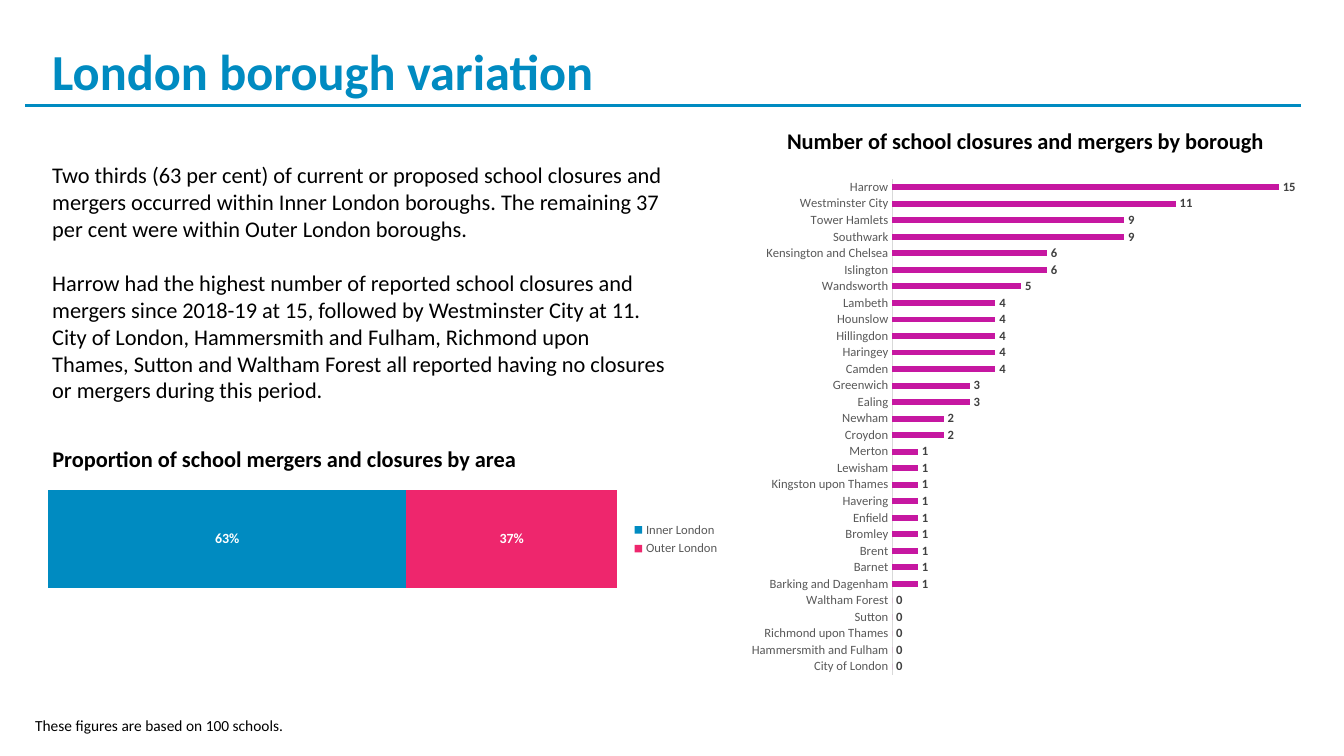
from lxml import etree
from pptx import Presentation
from pptx.chart.data import CategoryChartData
from pptx.dml.color import RGBColor
from pptx.enum.chart import (XL_CHART_TYPE, XL_LABEL_POSITION,
                             XL_LEGEND_POSITION, XL_TICK_MARK)
from pptx.enum.shapes import MSO_CONNECTOR
from pptx.enum.text import MSO_ANCHOR
from pptx.oxml.ns import qn
from pptx.util import Pt

CLUSTERED = XL_CHART_TYPE.BAR_CLUSTERED
STACKED = XL_CHART_TYPE.BAR_STACKED_100
OUTSIDE_END = XL_LABEL_POSITION.OUTSIDE_END
CENTER = XL_LABEL_POSITION.CENTER
LEGEND_RIGHT = XL_LEGEND_POSITION.RIGHT
NO_TICKS = XL_TICK_MARK.NONE
STRAIGHT = MSO_CONNECTOR.STRAIGHT
TOP, MIDDLE = MSO_ANCHOR.TOP, MSO_ANCHOR.MIDDLE

FONT = "Calibri"
BLUE, PINK, MAGENTA = "008BC1", "EE266D", "C617A1"
BLACK, WHITE, GREY, DARK_GREY, PALE_GREY = (
    "000000", "FFFFFF", "595959", "404040", "D9D9D9")
LEFT_MARGIN = 30.24

FINDINGS = [
    "Two thirds (63 per cent) of current or proposed school closures and "
    "mergers occurred within Inner London boroughs. The remaining 37 per cent "
    "were within Outer London boroughs.",
    "Harrow had the highest number of reported school closures and mergers "
    "since 2018-19 at 15, followed by Westminster City at 11. City of London, "
    "Hammersmith and Fulham, Richmond upon Thames, Sutton and Waltham Forest "
    "all reported having no closures or mergers during this period.",
]

# Boroughs grouped by number of closures and mergers, bottom bar first
BOROUGHS_BY_COUNT = {
    0: ["City of London", "Hammersmith and Fulham", "Richmond upon Thames",
        "Sutton", "Waltham Forest"],
    1: ["Barking and Dagenham", "Barnet", "Brent", "Bromley", "Enfield",
        "Havering", "Kingston upon Thames", "Lewisham", "Merton"],
    2: ["Croydon", "Newham"],
    3: ["Ealing", "Greenwich"],
    4: ["Camden", "Haringey", "Hillingdon", "Hounslow", "Lambeth"],
    5: ["Wandsworth"],
    6: ["Islington", "Kensington and Chelsea"],
    9: ["Southwark", "Tower Hamlets"],
    11: ["Westminster City"],
    15: ["Harrow"],
}


def rgb(value):
    return RGBColor.from_string(value)


def set_font(font, size, color=BLACK, bold=False):
    for name, value in {"name": FONT, "size": Pt(size), "bold": bold}.items():
        setattr(font, name, value)
    font.color.rgb = rgb(color)


def add_text(slide, box, paragraphs, size, color=BLACK, bold=False,
             anchor=TOP, gap=0, line_spacing=None):
    frame = slide.shapes.add_textbox(*map(Pt, box)).text_frame
    frame.word_wrap = True
    frame.vertical_anchor = anchor
    for index, text in enumerate(paragraphs):
        paragraph = frame.paragraphs[0] if index == 0 else frame.add_paragraph()
        if index:
            paragraph.space_before = Pt(gap)
        if line_spacing:
            paragraph.line_spacing = line_spacing
        run = paragraph.add_run()
        run.text = text
        set_font(run.font, size, color, bold)


def add_rule(slide, left, right, y):
    rule = slide.shapes.add_connector(STRAIGHT, Pt(left), Pt(y), Pt(right), Pt(y))
    rule.line.color.rgb = rgb(BLUE)
    rule.line.width = Pt(2.25)
    etree.SubElement(rule._element.spPr, qn("a:effectLst"))


def set_plot_area(chart, x, y, w, h):
    """Fix the inner plot area as fractions of the chart."""
    plot_area = chart._chartSpace.chart.plotArea
    for old in plot_area.findall(qn("c:layout")):
        plot_area.remove(old)
    layout = etree.Element(qn("c:layout"))
    manual = etree.SubElement(layout, qn("c:manualLayout"))
    settings = {"layoutTarget": "inner", "xMode": "edge", "yMode": "edge",
                "x": x, "y": y, "w": w, "h": h}
    for tag, value in settings.items():
        etree.SubElement(manual, qn("c:" + tag)).set("val", str(value))
    plot_area.insert(0, layout)


def add_bar_chart(slide, kind, box, categories, series, plot_box, gap, maximum,
                  label_format, label_position, label_size, label_color):
    """Draw a bar chart; series maps each name to (values, colour)."""
    data = CategoryChartData(number_format=label_format)
    data.categories = categories
    for name, (values, _) in series.items():
        data.add_series(name, values)
    chart = slide.shapes.add_chart(kind, *map(Pt, box), data).chart
    set_font(chart.font, 10)
    chart.has_title = False
    chart.has_legend = False
    set_plot_area(chart, *plot_box)

    axis = chart.value_axis
    axis_format = {"minimum_scale": 0, "maximum_scale": maximum,
                   "has_major_gridlines": False, "visible": False}
    for name, value in axis_format.items():
        setattr(axis, name, value)

    plot = chart.plots[0]
    plot.gap_width = gap
    plot.vary_by_categories = False
    for bars, (_, color) in zip(plot.series, series.values()):
        bars.format.fill.solid()
        bars.format.fill.fore_color.rgb = rgb(color)
        labels = bars.data_labels
        label_settings = {"show_value": True, "position": label_position,
                          "number_format": label_format,
                          "number_format_is_linked": False}
        for name, value in label_settings.items():
            setattr(labels, name, value)
        set_font(labels.font, label_size, label_color, True)
    return chart


def add_borough_chart(slide):
    boroughs = [name for names in BOROUGHS_BY_COUNT.values() for name in names]
    counts = [n for n, names in BOROUGHS_BY_COUNT.items() for _ in names]
    chart = add_bar_chart(
        slide, CLUSTERED, (524.88, 115.92, 422.64, 385.92), boroughs,
        {"Series 1": (counts, MAGENTA)}, (0.266, 0.031, 0.697, 0.918),
        182, 16, "General", OUTSIDE_END, 9, DARK_GREY)
    axis = chart.category_axis
    axis.major_tick_mark = axis.minor_tick_mark = NO_TICKS
    set_font(axis.tick_labels.font, 9, GREY)
    axis.format.line.color.rgb = rgb(PALE_GREY)
    axis.format.line.width = Pt(0.75)


def add_area_chart(slide):
    chart = add_bar_chart(
        slide, STACKED, (23.76, 293.76, 497.52, 182.88), ["1"],
        {"Inner London": ([0.63], BLUE), "Outer London": ([0.37], PINK)},
        (0.021, 0.02, 0.817, 0.957), 150, 1, "0%", CENTER, 10, WHITE)
    chart.plots[0].overlap = 100
    chart.category_axis.visible = False
    chart.has_legend = True
    chart.legend.position = LEGEND_RIGHT
    chart.legend.include_in_layout = False
    set_font(chart.legend.font, 9, GREY)


def main():
    deck = Presentation()
    deck.slide_width, deck.slide_height = Pt(960), Pt(540)
    slide = deck.slides.add_slide(deck.slide_layouts[6])

    # Heading
    add_text(slide, (LEFT_MARGIN, 21.6, 828, 62.64), ["London borough variation"],
             36, BLUE, True, MIDDLE, line_spacing=0.9)
    add_rule(slide, 18, 929.52, 75.6)

    # Findings and footnote
    add_text(slide, (LEFT_MARGIN, 111.6, 455.76, 181.44), FINDINGS, 16, gap=19.5)
    add_text(slide, (18, 508.32, 756.72, 20.88),
             ["These figures are based on 100 schools."], 11)

    # Charts and their titles
    add_borough_chart(slide)
    add_area_chart(slide)
    for left, top, title in [
            (555.12, 87.12, "Number of school closures and mergers by borough"),
            (LEFT_MARGIN, 314.64,
             "Proportion of school mergers and closures by area")]:
        add_text(slide, (left, top, 378, 26.64), [title], 16, bold=True)

    deck.save("out.pptx")


if __name__ == "__main__":
    main()
